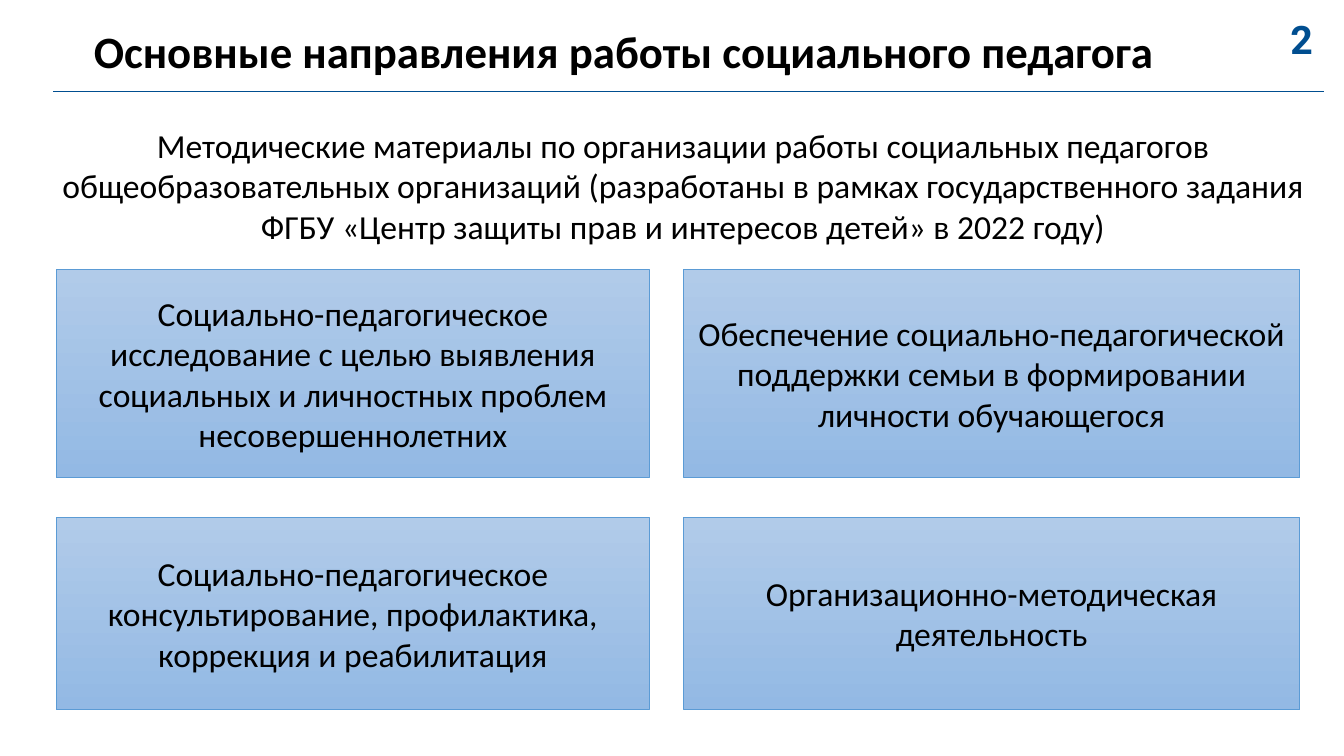
from dataclasses import dataclass

from lxml import etree
from pptx import Presentation
from pptx.dml.color import RGBColor
from pptx.enum.shapes import MSO_CONNECTOR, MSO_SHAPE
from pptx.enum.text import MSO_ANCHOR, PP_ALIGN
from pptx.oxml.ns import qn
from pptx.util import Inches, Pt

RECTANGLE = MSO_SHAPE.RECTANGLE
STRAIGHT = MSO_CONNECTOR.STRAIGHT
MIDDLE = MSO_ANCHOR.MIDDLE
CENTER, LEFT = PP_ALIGN.CENTER, PP_ALIGN.LEFT

TITLE = "Основные направления работы социального педагога"
PAGE_NUMBER = "2"
INTRO = (
    "Методические материалы по организации работы социальных педагогов "
    "общеобразовательных организаций (разработаны в рамках государственного "
    "задания ФГБУ «Центр защиты прав и интересов детей» в 2022 году)"
)
DIRECTIONS = [
    [
        "Социально-педагогическое исследование с целью выявления социальных "
        "и личностных проблем несовершеннолетних",
        "Обеспечение социально-педагогической поддержки семьи "
        "в формировании личности обучающегося",
    ],
    [
        "Социально-педагогическое консультирование, профилактика, "
        "коррекция и реабилитация",
        "Организационно-методическая деятельность",
    ],
]

# Each column is (left, width), each row is (top, height), in inches.
COLUMNS = [(0.56, 5.88), (6.78, 6.11)]
ROWS = [(2.67, 2.07), (5.13, 1.91)]


@dataclass(frozen=True)
class Theme:
    font: str = "Calibri"
    number_font: str = "Roboto"
    title_size: int = 32
    number_size: int = 28
    body_size: int = 24
    text: str = "000000"
    accent: str = "004E90"
    card_top: str = "B1CBE9"
    card_bottom: str = "93B9E4"
    card_line: str = "5B9BD5"


THEME = Theme()


def color(value):
    return RGBColor.from_string(value)


def write(shape, text, size=THEME.body_size, font=THEME.font, ink=THEME.text,
          bold=False, align=CENTER, spacing=1.0):
    frame = shape.text_frame
    frame.word_wrap = True
    frame.vertical_anchor = MIDDLE
    frame.text = text
    paragraph = frame.paragraphs[0]
    paragraph.alignment = align
    paragraph.line_spacing = spacing
    for run in paragraph.runs:
        run.font.name = font
        run.font.size = Pt(size)
        run.font.bold = bold
        run.font.color.rgb = color(ink)


def add_header(slide):
    title = slide.shapes.title
    title.left, title.top = Inches(0.42), Inches(0.17)
    title.width, title.height = Inches(11.54), Inches(0.74)
    write(title, TITLE, THEME.title_size, bold=True, spacing=0.9)

    number = slide.shapes.add_textbox(
        Inches(12.7), Inches(0.29), Inches(0.32), Inches(0.25))
    write(number, PAGE_NUMBER, THEME.number_size, THEME.number_font,
          THEME.accent, bold=True, align=LEFT, spacing=0.9)
    number.text_frame.margin_right = 0

    rule = slide.shapes.add_connector(
        STRAIGHT, Inches(0.53), Inches(0.91), Inches(13.13), Inches(0.91))
    rule.line.color.rgb = color(THEME.accent)
    rule.line.width = Pt(1)
    etree.SubElement(rule._element.spPr, qn("a:effectLst"))


def add_intro(slide):
    intro = slide.shapes.add_textbox(
        Inches(0.42), Inches(1.19), Inches(12.71), Inches(1.3))
    write(intro, INTRO)


def add_card(slide, text, column, row):
    (left, width), (top, height) = column, row
    card = slide.shapes.add_shape(
        RECTANGLE, Inches(left), Inches(top), Inches(width), Inches(height))
    card.shadow.inherit = False
    card.fill.gradient()
    card.fill.gradient_angle = 270
    stops = card.fill.gradient_stops
    for stop, position, shade in zip(
            stops, (0, 1), (THEME.card_top, THEME.card_bottom)):
        stop.position = position
        stop.color.rgb = color(shade)
    card.line.color.rgb = color(THEME.card_line)
    card.line.width = Pt(0.5)
    write(card, text)


def main():
    deck = Presentation()
    deck.slide_width, deck.slide_height = Inches(13.33), Inches(7.5)
    slide = deck.slides.add_slide(deck.slide_layouts.get_by_name("Title Only"))
    add_header(slide)
    add_intro(slide)
    for row, directions in zip(ROWS, DIRECTIONS):
        for column, direction in zip(COLUMNS, directions):
            add_card(slide, direction, column, row)
    deck.save("out.pptx")


if __name__ == "__main__":
    main()
